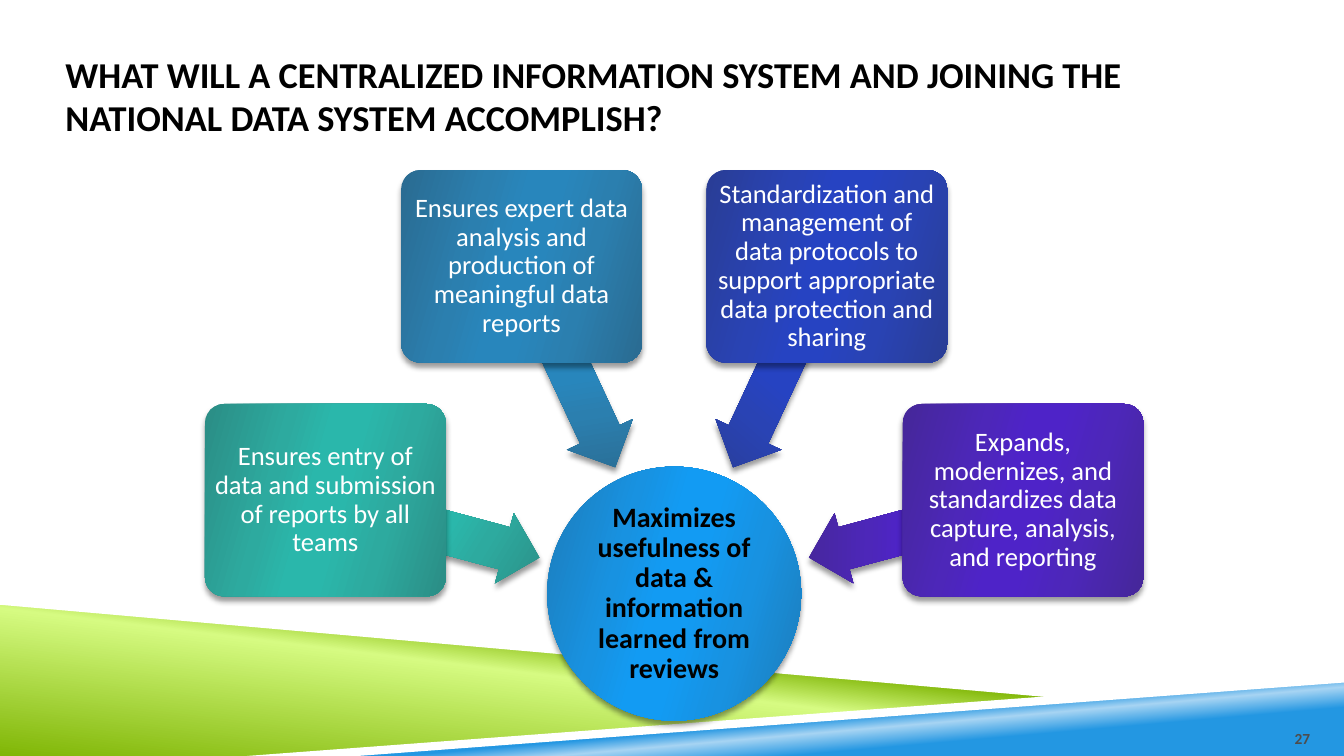
"""Build the slide about what a centralized information system accomplishes."""
from dataclasses import dataclass
from math import cos, radians, sin

from pptx import Presentation
from pptx.dml.color import RGBColor
from pptx.enum import shapes, text
from pptx.oxml import parse_xml
from pptx.oxml import ns
from pptx.shapes.autoshape import Shape
from pptx.slide import Slide
from pptx.text.text import TextFrame
from pptx.util import Cm, Pt

FONT = "Calibri"
BLACK = RGBColor(0x00, 0x00, 0x00)
WHITE = RGBColor(0xFF, 0xFF, 0xFF)
GREY = RGBColor(0x4D, 0x4D, 0x4D)
GREEN = RGBColor(0x80, 0xB6, 0x06)
LIME = RGBColor(0xD6, 0xFB, 0x82)
BLUE = RGBColor(0x23, 0x97, 0xE2)
PALE_BLUE = RGBColor(0xA7, 0xD5, 0xF3)

Shades = tuple[RGBColor, RGBColor, RGBColor]
Stops = list[tuple[int, RGBColor]]
Point = tuple[float, float]

SKY: Shades = (RGBColor(0x1D, 0x7C, 0xB9), RGBColor(0x18, 0x92, 0xE1), RGBColor(0x12, 0x9B, 0xF3))
TEAL: Shades = (RGBColor(0x2B, 0x8D, 0x85), RGBColor(0x2D, 0xAA, 0x9F), RGBColor(0x2A, 0xB7, 0xAB))
STEEL: Shades = (RGBColor(0x2A, 0x6B, 0x91), RGBColor(0x2B, 0x7F, 0xAF), RGBColor(0x28, 0x86, 0xBC))
ROYAL: Shades = (RGBColor(0x29, 0x3D, 0x95), RGBColor(0x29, 0x43, 0xB4), RGBColor(0x26, 0x43, 0xC2))
VIOLET: Shades = (RGBColor(0x45, 0x27, 0x99), RGBColor(0x4D, 0x27, 0xB9), RGBColor(0x4E, 0x23, 0xC8))

PAGE_WIDTH, PAGE_HEIGHT = 33.87, 19.05
HUB: Point = (16.99, 14.96)
HUB_SIZE = 6.4
ARROW_RADIUS, ARROW_SIZE = 6.31, (5.59, 1.83)
BOX_RADIUS, BOX_SIZE = 9.1, (6.07, 4.85)


@dataclass(frozen=True)
class Band:
    """A background band with its outline in centimetres."""
    points: list[Point]
    stops: Stops
    angle: int = 0


@dataclass(frozen=True)
class Benefit:
    """A benefit placed around the hub at an angle in degrees."""
    words: str
    angle: int
    shades: Shades


@dataclass(frozen=True)
class Style:
    """The look of a paragraph."""
    size: int
    color: RGBColor
    bold: bool = False
    align: text.PP_ALIGN = text.PP_ALIGN.CENTER
    spacing: float = 0.9


BANDS = [
    Band([(0, 15.16), (26.82, 17.58), (6.78, 19.05), (0, 19.05)],
         [(0, GREEN), (52, LIME), (66, GREEN)], 277),
    Band([(6.71, 19.05), (33.87, 17.07), (33.87, 19.05)],
         [(28, BLUE), (40, PALE_BLUE), (48, BLUE)], 265),
    Band([(0, 15.04), (0, 15.24), (26.77, 17.6), (28.17, 17.53)], [(0, WHITE)]),
    Band([(33.87, 16.99), (6.22, 19.05), (9.02, 19.05), (33.87, 17.2)], [(0, WHITE)]),
]
BENEFITS = [
    Benefit("Ensures entry of data and submission of reports by all teams", 195, TEAL),
    Benefit("Ensures expert data analysis and production of meaningful data reports", 245, STEEL),
    Benefit("Standardization and management of data protocols to support appropriate "
            "data protection and sharing", 295, ROYAL),
    Benefit("Expands, modernizes, and standardizes data capture, analysis, and reporting",
            345, VIOLET),
]


def paint(shape: Shape, stops: Stops, angle: int) -> None:
    """Fill a shape with one colour or a linear gradient, without outline."""
    shape.line.fill.background()
    shape.shadow.inherit = False
    if len(stops) == 1:
        shape.fill.solid()
        shape.fill.fore_color.rgb = stops[0][1]
        return
    shape.fill.background()
    marks = "".join(f'<a:gs pos="{at * 1000}"><a:srgbClr val="{color}"/></a:gs>'
                    for at, color in stops)
    gradient = parse_xml(f'<a:gradFill {ns.nsdecls("a")} rotWithShape="1"><a:gsLst>{marks}</a:gsLst>'
                         f'<a:lin ang="{angle * 60000}" scaled="0"/></a:gradFill>')
    properties = shape._element.spPr
    properties.replace(properties.find(ns.qn("a:noFill")), gradient)


def write(frame: TextFrame, words: str, style: Style, insets: tuple[float, float, float, float],
          anchor: text.MSO_ANCHOR = text.MSO_ANCHOR.MIDDLE) -> None:
    """Write one paragraph with insets given as left, top, right and bottom."""
    frame.word_wrap = True
    frame.vertical_anchor = anchor
    (frame.margin_left, frame.margin_top,
     frame.margin_right, frame.margin_bottom) = map(Cm, insets)
    para = frame.paragraphs[0]
    para.alignment = style.align
    para.line_spacing = style.spacing
    span = para.add_run()
    span.text = words
    span.font.name = FONT
    span.font.size = Pt(style.size)
    span.font.bold = style.bold
    span.font.color.rgb = style.color


def add_band(page: Slide, band: Band) -> None:
    """Draw a background band."""
    start, *others = [(Cm(x), Cm(y)) for x, y in band.points]
    builder = page.shapes.build_freeform(*start)
    builder.add_line_segments(others, close=True)
    paint(builder.convert_to_shape(), band.stops, band.angle)


def add_node(page: Slide, kind: shapes.MSO_SHAPE, center: Point, size: Point,
             shades: Shades) -> Shape:
    """Draw a centred, shaded shape with a soft shadow below it."""
    left, top = (middle - length / 2 for middle, length in zip(center, size))
    node = page.shapes.add_shape(kind, Cm(left), Cm(top), Cm(size[0]), Cm(size[1]))
    dark, medium, bright = shades
    paint(node, [(0, dark), (30, medium), (45, bright), (55, bright), (73, medium), (100, dark)], 16)
    node._element.spPr.find(ns.qn("a:effectLst")).append(parse_xml(
        f'<a:outerShdw {ns.nsdecls("a")} blurRad="{Pt(4)}" dist="{Pt(3.3)}" dir="5400000" '
        'rotWithShape="0"><a:srgbClr val="000000"><a:alpha val="40000"/></a:srgbClr></a:outerShdw>'))
    return node


def around_hub(radius: float, angle: int) -> Point:
    """Return the point at a radius and angle from the hub."""
    return HUB[0] + radius * cos(radians(angle)), HUB[1] + radius * sin(radians(angle))


def add_benefit(page: Slide, benefit: Benefit) -> None:
    """Draw a benefit box and its arrow to the hub."""
    arrow = add_node(page, shapes.MSO_SHAPE.LEFT_ARROW, around_hub(ARROW_RADIUS, benefit.angle),
                     ARROW_SIZE, benefit.shades)
    arrow.rotation = benefit.angle
    arrow.adjustments[0], arrow.adjustments[1] = 0.6, 0.5
    box = add_node(page, shapes.MSO_SHAPE.ROUNDED_RECTANGLE,
                   around_hub(BOX_RADIUS, benefit.angle), BOX_SIZE, benefit.shades)
    box.adjustments[0] = 0.1
    write(box.text_frame, benefit.words, Style(19, WHITE), (0.1, 0.1, 0.1, 0.1))


def main() -> None:
    """Build and save the deck."""
    deck = Presentation()
    deck.slide_width, deck.slide_height = Cm(PAGE_WIDTH), Cm(PAGE_HEIGHT)
    page = deck.slides.add_slide(deck.slide_layouts[6])
    for band in BANDS:
        add_band(page, band)

    title = page.shapes.add_textbox(Cm(1.65), Cm(1.37), Cm(29.69), Cm(2.08))
    write(title.text_frame,
          "WHAT WILL A CENTRALIZED INFORMATION SYSTEM AND JOINING THE NATIONAL DATA SYSTEM ACCOMPLISH?",
          Style(26, BLACK, True, text.PP_ALIGN.LEFT, 1.0), (0, 0.13, 0, 0.13))

    hub = add_node(page, shapes.MSO_SHAPE.OVAL, HUB, (HUB_SIZE, HUB_SIZE), SKY)
    write(hub.text_frame, "Maximizes usefulness of data & information learned from reviews",
          Style(20, BLACK, True), (0.03, 0.03, 0.03, 0.03))
    for benefit in BENEFITS:
        add_benefit(page, benefit)

    number = page.shapes.add_textbox(Cm(31.32), Cm(17.83), Cm(1.7), Cm(1.02))
    write(number.text_frame, "27", Style(11, GREY, True, text.PP_ALIGN.RIGHT, 1.0),
          (0, 0.13, 0, 0), text.MSO_ANCHOR.BOTTOM)
    deck.save("out.pptx")


if __name__ == "__main__":
    main()
